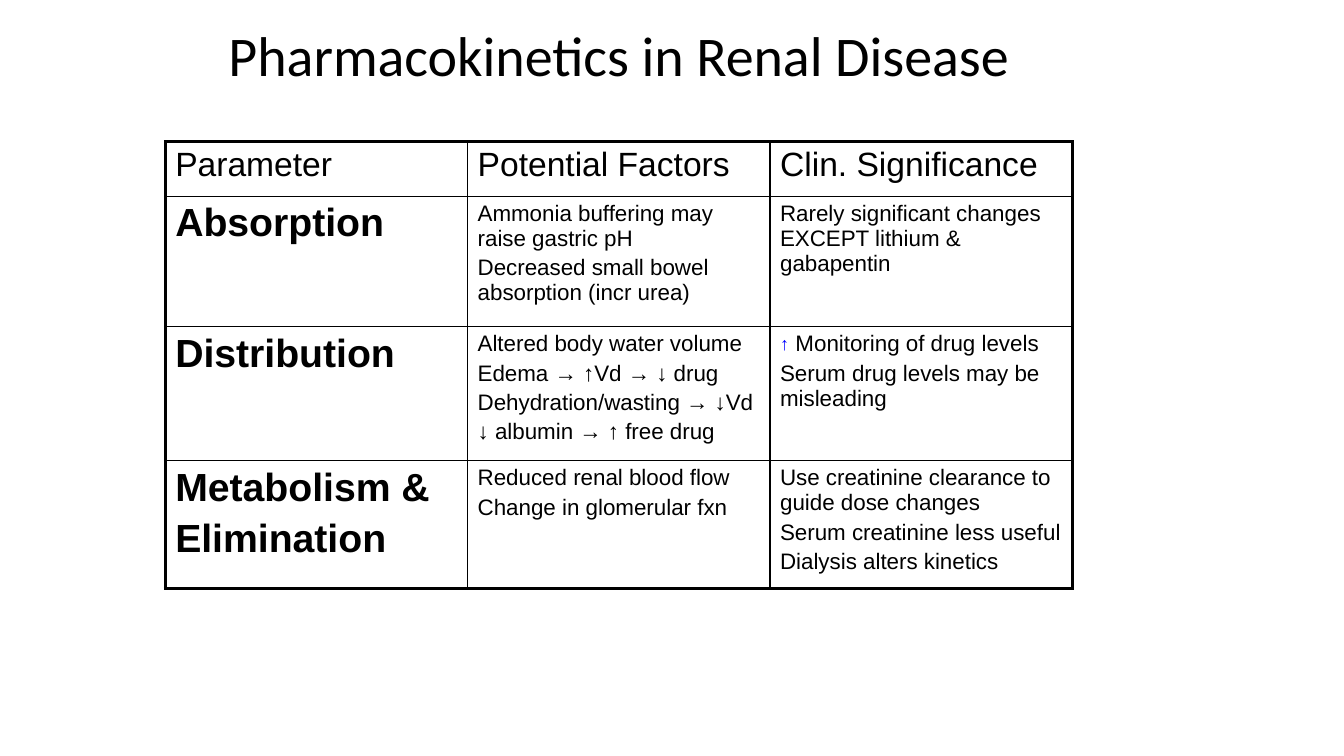
"""Build a slide with a table of pharmacokinetic changes in renal disease."""
from lxml import etree
from pptx import Presentation
from pptx.dml.color import RGBColor
from pptx.enum.text import MSO_ANCHOR, PP_ALIGN
from pptx.oxml.ns import qn
from pptx.util import Pt

LEFT = PP_ALIGN.LEFT
MIDDLE = MSO_ANCHOR.MIDDLE
BLACK = RGBColor(0x00, 0x00, 0x00)
BLUE = RGBColor(0x00, 0x00, 0xFF)

TITLE = "Pharmacokinetics in Renal Disease"
BULLET = "↑"
BULLETED = "Monitoring of drug levels"
ROWS = [
    (["Parameter"], ["Potential Factors"], ["Clin. Significance"]),
    (["Absorption"],
     ["Ammonia buffering may raise gastric pH",
      "Decreased small bowel absorption (incr urea)"],
     ["Rarely significant changes EXCEPT lithium & gabapentin"]),
    (["Distribution"],
     ["Altered body water volume", "Edema → ↑Vd → ↓ drug",
      "Dehydration/wasting → ↓Vd", "↓ albumin → ↑ free drug"],
     [BULLETED, "Serum drug levels may be misleading"]),
    (["Metabolism &", "Elimination"],
     ["Reduced renal blood flow", "Change in glomerular fxn"],
     ["Use creatinine clearance to guide dose changes",
      "Serum creatinine less useful", "Dialysis alters kinetics"]),
]
ROW_HEIGHTS = [39.4, 92.9, 95.8, 91.4]
COLUMN_WIDTH = 216
TABLE_LEFT, TABLE_TOP = 118, 101
HEADER_SIZE, PARAMETER_SIZE, DETAIL_SIZE = 24, 28, 16
OUTER_LINE, INNER_LINE = 2.25, 1
BULLET_INDENT = 11


def add_bullet(paragraph):
    """Give the paragraph a small blue arrow bullet."""
    properties = paragraph._p.get_or_add_pPr()
    properties.set("marL", str(Pt(BULLET_INDENT)))
    properties.set("indent", str(-Pt(BULLET_INDENT)))
    color = etree.SubElement(properties, qn("a:buClr"))
    etree.SubElement(color, qn("a:srgbClr"), val=str(BLUE))
    etree.SubElement(properties, qn("a:buSzPct"), val="80000")
    etree.SubElement(properties, qn("a:buFont"), typeface="Arial")
    etree.SubElement(properties, qn("a:buChar"), char=BULLET)


def set_borders(cell, row, column):
    """Draw heavy lines on the table's outside and thin lines inside."""
    outer_sides = [("lnL", column == 0), ("lnR", column == len(ROWS[0]) - 1),
                   ("lnT", row == 0), ("lnB", row == len(ROWS) - 1)]
    properties = cell._tc.get_or_add_tcPr()
    for position, (side, is_outer) in enumerate(outer_sides):
        width = OUTER_LINE if is_outer else INNER_LINE
        line = etree.Element(qn(f"a:{side}"), w=str(Pt(width)))
        fill = etree.SubElement(line, qn("a:solidFill"))
        etree.SubElement(fill, qn("a:srgbClr"), val=str(BLACK))
        properties.insert(position, line)


def format_font(paragraph, name, size, bold=False):
    """Set the black font of a paragraph."""
    font = paragraph.font
    font.name, font.size, font.bold = name, Pt(size), bold
    font.color.rgb = BLACK


def fill_cell(cell, lines, row, column):
    """Write one cell's paragraphs and format the cell."""
    cell.fill.background()
    set_borders(cell, row, column)
    cell.margin_left = cell.margin_right = Pt(7.2)
    cell.margin_top = cell.margin_bottom = Pt(3.6)
    is_parameter = row > 0 and column == 0
    size = HEADER_SIZE if row == 0 else PARAMETER_SIZE if is_parameter else DETAIL_SIZE
    cell.text = "\n".join(lines)
    for index, paragraph in enumerate(cell.text_frame.paragraphs):
        if index > 0:
            paragraph.space_before = Pt(0.2 * size)
        if paragraph.text == BULLETED:
            add_bullet(paragraph)
        format_font(paragraph, "Arial", size, is_parameter)


def main():
    """Create and save the presentation."""
    presentation = Presentation()
    presentation.slide_width, presentation.slide_height = Pt(960), Pt(540)
    slide = presentation.slides.add_slide(presentation.slide_layouts[5])

    title = slide.shapes.title
    title.left, title.top, title.width, title.height = Pt(156), Pt(-6), Pt(648), Pt(90)
    title.text_frame.text = TITLE
    title.text_frame.vertical_anchor = MIDDLE
    title_paragraph = title.text_frame.paragraphs[0]
    title_paragraph.alignment = LEFT
    format_font(title_paragraph, "Calibri", 40)

    column_count = len(ROWS[0])
    table = slide.shapes.add_table(
        len(ROWS), column_count, Pt(TABLE_LEFT), Pt(TABLE_TOP),
        Pt(COLUMN_WIDTH * column_count), Pt(sum(ROW_HEIGHTS))).table
    table.first_row = table.horz_banding = False
    for column in table.columns:
        column.width = Pt(COLUMN_WIDTH)
    for row, (cells, height) in enumerate(zip(ROWS, ROW_HEIGHTS)):
        table.rows[row].height = Pt(height)
        for column, lines in enumerate(cells):
            fill_cell(table.cell(row, column), lines, row, column)

    presentation.save("out.pptx")


if __name__ == "__main__":
    main()
